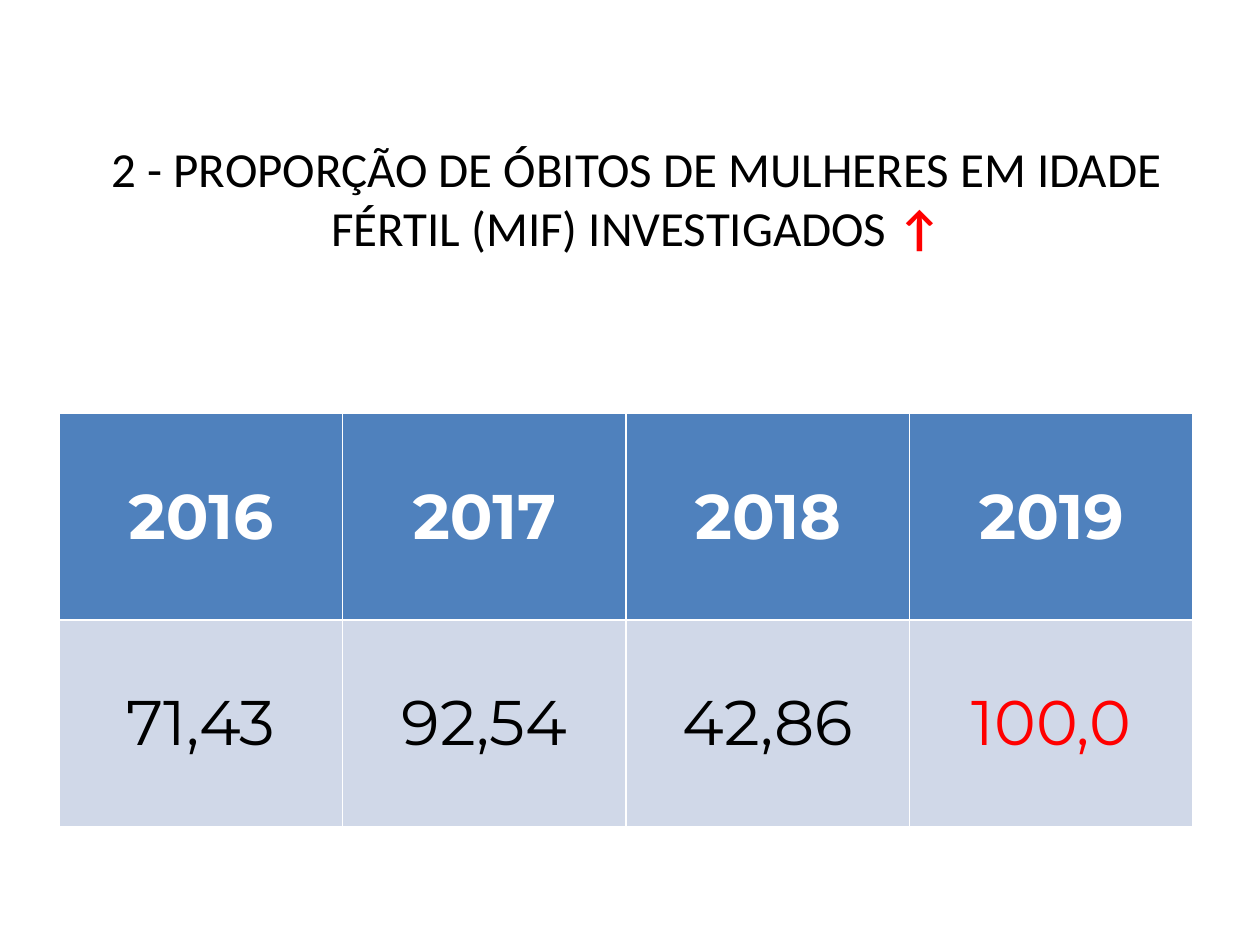
import pptx
import pptx.dml.color
import pptx.enum.text
import pptx.util

Inches = pptx.util.Inches
MIDDLE = pptx.enum.text.MSO_ANCHOR.MIDDLE
CENTER = pptx.enum.text.PP_ALIGN.CENTER

HEADING = "2 - PROPORÇÃO DE ÓBITOS DE MULHERES EM IDADE FÉRTIL (MIF) INVESTIGADOS "
YEARS = ["2016", "2017", "2018", "2019"]
PROPORTIONS = ["71,43", "92,54", "42,86", "100,0"]


def rgb(value):
    return pptx.dml.color.RGBColor.from_string(value)


class IndicatorSlide:
    black, white, red = "000000", "FFFFFF", "FF0000"
    header_fill, value_fill = "4F81BD", "D0D8E8"
    heading_format = {"name": "Calibri", "size": pptx.util.Pt(28), "bold": False}
    table_format = {"name": "Montserrat", "size": pptx.util.Pt(36), "bold": False}

    def __init__(self, presentation):
        self.slide = presentation.slides.add_slide(presentation.slide_layouts[5])

    def add_run(self, paragraph, text, color, text_format):
        paragraph.alignment = CENTER
        run = paragraph.add_run()
        run.text = text
        for attribute, value in text_format.items():
            setattr(run.font, attribute, value)
        run.font.color.rgb = rgb(color)

    def add_title(self, heading, trend, left, top, width, height):
        title = self.slide.shapes.title
        position = {"left": left, "top": top, "width": width, "height": height}
        for attribute, value in position.items():
            setattr(title, attribute, Inches(value))
        title.text_frame.vertical_anchor = MIDDLE
        paragraph = title.text_frame.paragraphs[0]
        self.add_run(paragraph, heading, self.black, self.heading_format)
        self.add_run(paragraph, trend, self.red, self.heading_format | {"bold": True})

    def fill_cell(self, cell, text, color, fill, text_format):
        cell.fill.solid()
        cell.fill.fore_color.rgb = rgb(fill)
        cell.vertical_anchor = MIDDLE
        self.add_run(cell.text_frame.paragraphs[0], text, color, text_format)

    def add_table(self, years, proportions, left, top, width, height):
        table = self.slide.shapes.add_table(
            2, len(years), Inches(left), Inches(top), Inches(width), Inches(height)
        ).table
        latest = len(years) - 1
        for column, (year, proportion) in enumerate(zip(years, proportions)):
            self.fill_cell(table.cell(0, column), year, self.white,
                           self.header_fill, self.table_format | {"bold": True})
            color = self.red if column == latest else self.black
            self.fill_cell(table.cell(1, column), proportion, color,
                           self.value_fill, self.table_format)


def main():
    presentation = pptx.Presentation()
    presentation.slide_width = Inches(10)
    presentation.slide_height = Inches(7.5)
    indicator = IndicatorSlide(presentation)
    indicator.add_title(HEADING, "↑", 0.55, 0.16, 9, 2.81)
    indicator.add_table(YEARS, PROPORTIONS, 0.47, 3.28, 9, 3.28)
    presentation.save("out.pptx")


if __name__ == "__main__":
    main()
